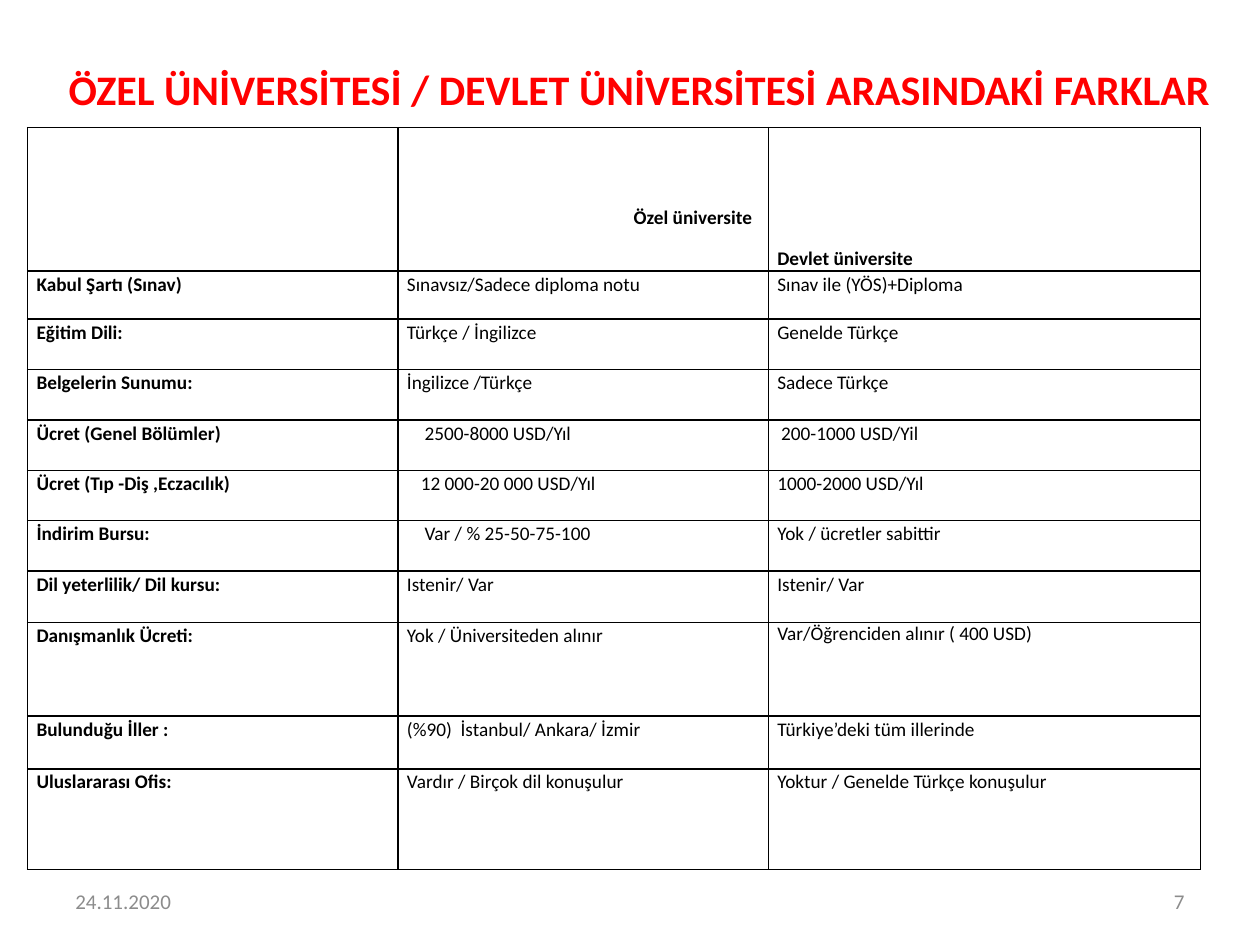
from dataclasses import dataclass

from lxml import etree
from pptx import Presentation
from pptx.dml.color import RGBColor
from pptx.enum import text
from pptx.oxml import ns
from pptx.util import Inches, Pt

RED = RGBColor(0xFF, 0x00, 0x00)
BLACK = RGBColor(0x00, 0x00, 0x00)
GREY = RGBColor(0x8C, 0x8C, 0x8C)
WIDTH, HEIGHT = Inches(10), Inches(7.5)
FONT = "Calibri"
COLS = (2.94, 2.94, 3.43)
MARGIN = 0.07
LINE = 1.07


@dataclass(frozen=True)
class Label:
    words: str
    box: tuple
    size: float
    color: RGBColor
    align: text.PP_ALIGN
    bold: bool = False


@dataclass(frozen=True)
class Entry:
    words: str
    indent: float = 0
    right: float = 0
    bottom: float = 0
    bold: bool = False
    align: text.PP_ALIGN = text.PP_ALIGN.LEFT
    anchor: text.MSO_ANCHOR = text.MSO_ANCHOR.TOP
    spacing: float = LINE


@dataclass(frozen=True)
class Row:
    height: float
    entries: tuple


def topic(height: float, name: str, private, state) -> Row:
    cells = [c if isinstance(c, Entry) else Entry(c) for c in (private, state)]
    return Row(height, (Entry(name, bold=True), *cells))


LABELS = (
    Label("ÖZEL ÜNİVERSİTESİ / DEVLET ÜNİVERSİTESİ ARASINDAKİ FARKLAR",
          (0.035, 0.055, 0.945, 0.077), 24, RED, text.PP_ALIGN.CENTER, True),
    Label("24.11.2020", (0.05, 0.927, 0.233, 0.053), 12, GREY, text.PP_ALIGN.LEFT),
    Label("7", (0.717, 0.927, 0.233, 0.053), 12, GREY, text.PP_ALIGN.RIGHT),
)

HEADER = Row(1.14, (
    Entry(""),
    Entry("Özel üniversite", right=0.06, bottom=0.33, bold=True,
          align=text.PP_ALIGN.RIGHT, anchor=text.MSO_ANCHOR.BOTTOM),
    Entry("Devlet üniversite", bold=True, anchor=text.MSO_ANCHOR.BOTTOM),
))

ROWS = (
    HEADER,
    topic(0.38, "Kabul Şartı (Sınav)", "Sınavsız/Sadece diploma notu",
          "Sınav ile (YÖS)+Diploma"),
    topic(0.4, "Eğitim Dili:", "Türkçe / İngilizce", "Genelde Türkçe"),
    topic(0.4, "Belgelerin Sunumu:", "İngilizce /Türkçe", "Sadece Türkçe"),
    topic(0.4, "Ücret (Genel Bölümler)", Entry("2500-8000 USD/Yıl", indent=0.14),
          Entry("200-1000 USD/Yil", indent=0.03)),
    topic(0.4, "Ücret (Tıp -Diş ,Eczacılık)",
          Entry("12 000-20 000 USD/Yıl", indent=0.11), "1000-2000 USD/Yıl"),
    topic(0.4, "İndirim Bursu:", Entry("Var / % 25-50-75-100", indent=0.14),
          "Yok / ücretler sabittir"),
    topic(0.41, "Dil yeterlilik/ Dil kursu:", "Istenir/ Var", "Istenir/ Var"),
    topic(0.74, "Danışmanlık Ücreti:", "Yok / Üniversiteden alınır",
          Entry("Var/Öğrenciden alınır ( 400 USD)", spacing=Pt(12.9))),
    topic(0.42, "Bulunduğu İller :", "(%90)  İstanbul/ Ankara/ İzmir",
          "Türkiye’deki tüm illerinde"),
    topic(0.8, "Uluslararası Ofis:", "Vardır / Birçok dil konuşulur",
          "Yoktur / Genelde Türkçe konuşulur"),
)


def assign(target, values: dict) -> None:
    for name, value in values.items():
        setattr(target, name, value)


def write(p, words: str, size: float, color: RGBColor, bold: bool) -> None:
    r = p.add_run()
    r.text = words
    assign(r.font, {"name": FONT, "size": Pt(size), "bold": bold})
    r.font.color.rgb = color


def draw_label(slide, label: Label) -> None:
    x, y, w, h = label.box
    sp = slide.shapes.add_textbox(
        round(x * WIDTH), round(y * HEIGHT), round(w * WIDTH), round(h * HEIGHT))
    tf = sp.text_frame
    assign(tf, {"word_wrap": True, "vertical_anchor": text.MSO_ANCHOR.MIDDLE})
    p = tf.paragraphs[0]
    p.alignment = label.align
    write(p, label.words, label.size, label.color, label.bold)


def draw_borders(cell) -> None:
    tc_pr = cell._tc.get_or_add_tcPr()
    for i, side in enumerate(("lnL", "lnR", "lnT", "lnB")):
        ln = etree.Element(ns.qn(f"a:{side}"), w=str(Pt(1)))
        fill = etree.SubElement(ln, ns.qn("a:solidFill"))
        etree.SubElement(fill, ns.qn("a:srgbClr"), val=str(BLACK))
        tc_pr.insert(i, ln)


def draw_cell(cell, entry: Entry) -> None:
    assign(cell, {
        "margin_left": Inches(MARGIN + entry.indent),
        "margin_right": Inches(MARGIN + entry.right),
        "margin_top": 0,
        "margin_bottom": Inches(entry.bottom),
        "vertical_anchor": entry.anchor,
    })
    cell.fill.background()
    draw_borders(cell)
    if entry.words:
        p = cell.text_frame.paragraphs[0]
        assign(p, {"alignment": entry.align, "line_spacing": entry.spacing,
                   "space_after": Pt(8)})
        write(p, entry.words, 11, BLACK, entry.bold)


def draw_table(slide, rows: tuple) -> None:
    sp = slide.shapes.add_table(
        len(rows), len(COLS), round(0.022 * WIDTH), round(0.135 * HEIGHT),
        Inches(sum(COLS)), Inches(sum(row.height for row in rows)))
    table = sp.table
    assign(table, {"first_row": False, "horz_banding": False})
    for column, width in zip(table.columns, COLS):
        column.width = Inches(width)
    for i, row in enumerate(rows):
        table.rows[i].height = Inches(row.height)
        for j, entry in enumerate(row.entries):
            draw_cell(table.cell(i, j), entry)


def main() -> None:
    prs = Presentation()
    assign(prs, {"slide_width": WIDTH, "slide_height": HEIGHT})
    slide = prs.slides.add_slide(prs.slide_layouts[6])
    for label in LABELS:
        draw_label(slide, label)
    draw_table(slide, ROWS)
    prs.save("out.pptx")


if __name__ == "__main__":
    main()
